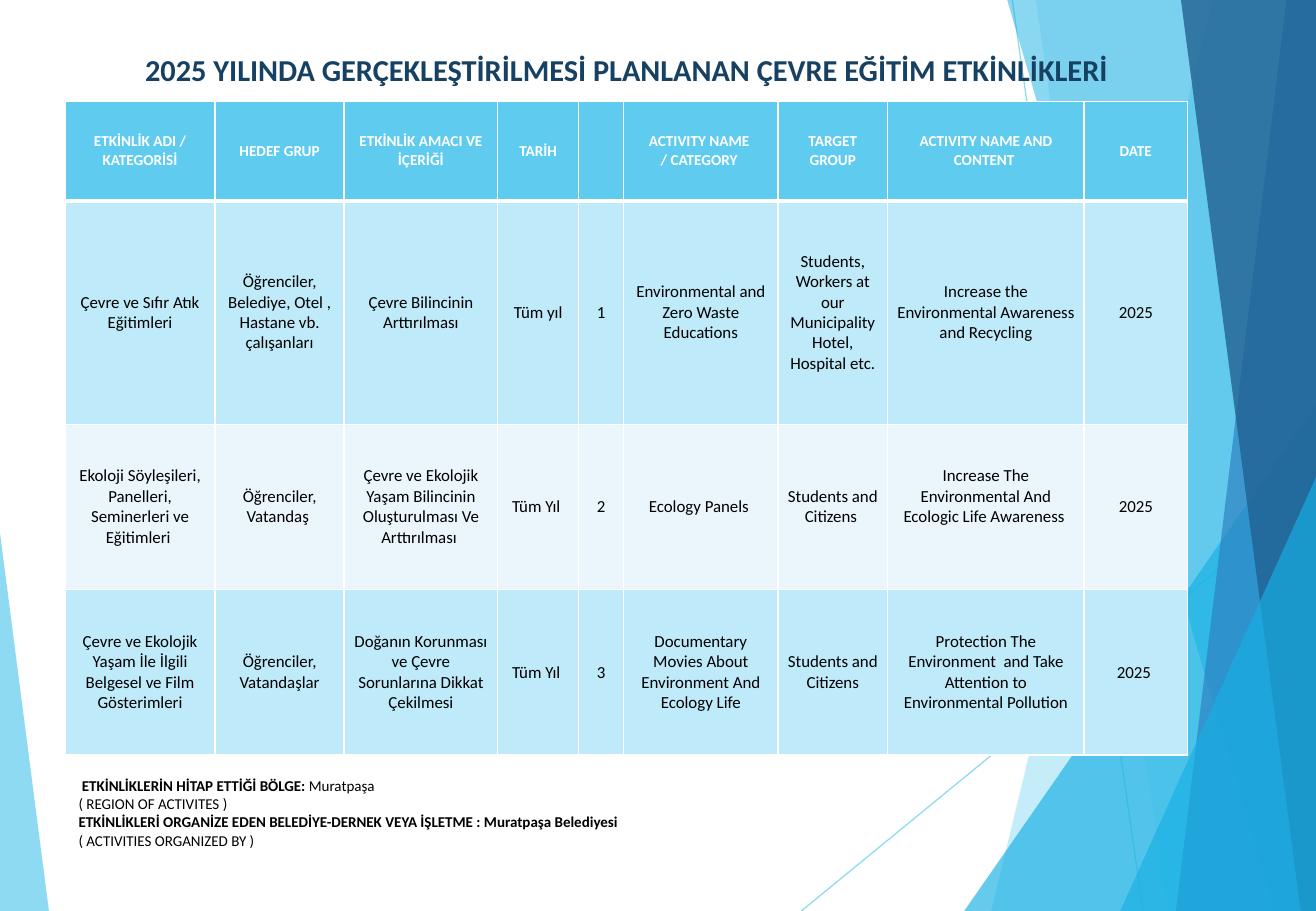
from dataclasses import dataclass

from lxml.etree import SubElement
from pptx import Presentation
from pptx.dml.color import RGBColor
from pptx.enum.shapes import MSO_CONNECTOR, MSO_SHAPE
from pptx.enum.text import MSO_ANCHOR, PP_ALIGN
from pptx.oxml.ns import qn
from pptx.util import Pt

WIDTH, HEIGHT = 780, 540
FONT = "Calibri"
COLORS = {
    "sky": "5FCBEF", "cyan": "17B0E4", "blue": "2E83C3", "navy": "226292",
    "title": "174162", "white": "FFFFFF", "black": "000000",
    "band_dark": "BFEAF9", "band_light": "EAF6FC",
}


@dataclass(frozen=True)
class Ray:
    start: tuple[float, float]
    end: tuple[float, float]


@dataclass(frozen=True)
class Facet:
    """A full-height area from a slanted left edge to the right slide edge."""
    top_x: float
    bottom_x: float
    color: str
    opacity: int


@dataclass(frozen=True)
class Triangle:
    """A right triangle standing on the bottom slide edge."""
    left: float
    top: float
    width: float
    apex: float
    color: str
    opacity: int


RAYS = [Ray((600, 0), (677.5, HEIGHT)), Ray((WIDTH, 290), (475, HEIGHT))]
FACETS = [
    Facet(718.5, 587.5, "sky", 36),
    Facet(614, 692, "sky", 20),
    Triangle(571.5, 240, 208.5, 1, "cyan", 66),
    Facet(597, 755.3, "cyan", 50),
    Facet(762.5, 697, "blue", 70),
    Facet(700, 771, "navy", 80),
    Triangle(664, 283, 116, 1, "cyan", 66),
    Triangle(0, 316, 29, 0, "sky", 70),
]

TITLE = "2025 YILINDA GERÇEKLEŞTİRİLMESİ PLANLANAN ÇEVRE EĞİTİM ETKİNLİKLERİ"
FOOTER = [
    [(" ", False), ("ETKİNLİKLERİN HİTAP ETTİĞİ BÖLGE: ", True), ("Muratpaşa", False)],
    [("( REGION OF ACTIVITES )", False)],
    [("ETKİNLİKLERİ ORGANİZE EDEN BELEDİYE-DERNEK VEYA İŞLETME : Muratpaşa Belediyesi", True)],
    [("( ACTIVITIES ORGANIZED BY )", False)],
]

COLUMN_WIDTHS = [89, 76.5, 91, 48, 26.7, 91.5, 65, 116.5, 61.3]
ROW_HEIGHTS = [59, 132.5, 98, 98]
ROW_FILLS = ["sky", "band_dark", "band_light", "band_dark"]
ROWS = [
    ["ETKİNLİK ADI / KATEGORİSİ", "HEDEF GRUP", "ETKİNLİK AMACI VE İÇERİĞİ", "TARİH", "",
     "ACTIVITY NAME \n/ CATEGORY ", "TARGET GROUP", "ACTIVITY NAME AND CONTENT ", " DATE "],
    ["Çevre ve Sıfır Atık Eğitimleri", "Öğrenciler, Belediye, Otel , Hastane vb. çalışanları",
     "Çevre Bilincinin Arttırılması", "Tüm yıl", "1",
     "Environmental and Zero Waste\n Educations ",
     "Students, Workers at our Municipality Hotel, Hospital etc.",
     "Increase the Environmental Awareness and Recycling", "2025"],
    ["Ekoloji Söyleşileri, Panelleri, Seminerleri ve Eğitimleri ", "Öğrenciler, Vatandaş ",
     "Çevre ve Ekolojik Yaşam Bilincinin Oluşturulması Ve Arttırılması ", "Tüm Yıl ", "2",
     "Ecology Panels ", "Students and Citizens ",
     "Increase The Environmental And Ecologic Life Awareness ", "2025"],
    ["Çevre ve Ekolojik Yaşam İle İlgili Belgesel ve Film Gösterimleri",
     "Öğrenciler, Vatandaşlar", "Doğanın Korunması ve Çevre Sorunlarına Dikkat Çekilmesi",
     "Tüm Yıl ", "3", "Documentary Movies About Environment And Ecology Life",
     "Students and Citizens",
     "Protection The Environment  and Take Attention to Environmental Pollution", "2025 "],
]
RAISED_CELL = (2, 7)


def rgb(name: str) -> RGBColor:
    return RGBColor.from_string(COLORS[name])


def set_opacity(shape, percent: int) -> None:
    for color in shape.element.spPr.iter(qn("a:srgbClr")):
        SubElement(color, qn("a:alpha"), val=str(percent * 1000))


def write_spans(para, spans, *, size: float, color: str = "black",
                align=PP_ALIGN.LEFT) -> None:
    """Fill a paragraph with (text, bold) spans."""
    para.alignment = align
    for text, bold in spans:
        span = para.add_run()
        span.text = text
        span.font.name = FONT
        span.font.size = Pt(size)
        span.font.bold = bold
        span.font.color.rgb = rgb(color)


def write_paragraphs(frame, lines, **text_format) -> None:
    for index, spans in enumerate(lines):
        para = frame.add_paragraph() if index else frame.paragraphs[0]
        write_spans(para, spans, **text_format)


def add_text(page, left: float, top: float, width: float, height: float, lines, *,
             anchor=MSO_ANCHOR.TOP, **text_format) -> None:
    box = page.shapes.add_textbox(Pt(left), Pt(top), Pt(width), Pt(height))
    box.text_frame.word_wrap = True
    box.text_frame.vertical_anchor = anchor
    write_paragraphs(box.text_frame, lines, **text_format)


def add_ray(page, ray: Ray) -> None:
    line = page.shapes.add_connector(
        MSO_CONNECTOR.STRAIGHT, *map(Pt, ray.start + ray.end))
    line.line.color.rgb = rgb("sky")
    line.line.width = Pt(0.75)
    set_opacity(line, 70)
    SubElement(line.element.spPr, qn("a:effectLst"))


def add_facet(page, facet: Facet | Triangle) -> None:
    if isinstance(facet, Triangle):
        shape = page.shapes.add_shape(
            MSO_SHAPE.ISOSCELES_TRIANGLE, Pt(facet.left), Pt(facet.top),
            Pt(facet.width), Pt(HEIGHT - facet.top))
        shape.adjustments[0] = facet.apex
    else:
        outline = page.shapes.build_freeform(Pt(facet.top_x), 0)
        corners = [(WIDTH, 0), (WIDTH, HEIGHT), (facet.bottom_x, HEIGHT)]
        outline.add_line_segments([(Pt(x), Pt(y)) for x, y in corners], close=True)
        shape = outline.convert_to_shape()
    shape.fill.solid()
    shape.fill.fore_color.rgb = rgb(facet.color)
    set_opacity(shape, facet.opacity)
    shape.line.fill.background()
    shape.shadow.inherit = False


def add_borders(cell, widths: dict[str, float]) -> None:
    properties = cell._tc.get_or_add_tcPr()
    for side, width in widths.items():
        border = SubElement(properties, qn(f"a:ln{side}"), w=str(Pt(width)))
        SubElement(SubElement(border, qn("a:solidFill")), qn("a:srgbClr"),
                   val=COLORS["white"])


def add_activity_table(page) -> None:
    frame = page.shapes.add_table(
        len(ROWS), len(COLUMN_WIDTHS), Pt(38.5), Pt(60),
        Pt(sum(COLUMN_WIDTHS)), Pt(sum(ROW_HEIGHTS)))
    table = frame.table
    for column, width in zip(table.columns, COLUMN_WIDTHS):
        column.width = Pt(width)
    for r, (texts, height, fill) in enumerate(zip(ROWS, ROW_HEIGHTS, ROW_FILLS)):
        table.rows[r].height = Pt(height)
        header = r == 0
        for c, text in enumerate(texts):
            cell = table.cell(r, c)
            cell.margin_left = cell.margin_right = Pt(5)
            cell.margin_top = Pt(2.6)
            cell.margin_bottom = Pt(14.8 if (r, c) == RAISED_CELL else 2.6)
            cell.vertical_anchor = MSO_ANCHOR.MIDDLE
            add_borders(cell, {"L": 1, "R": 1, "T": 3 if r == 1 else 1, "B": 3 if header else 1})
            cell.fill.solid()
            cell.fill.fore_color.rgb = rgb(fill)
            if text:
                write_paragraphs(
                    cell.text_frame, [[(line, header)] for line in text.split("\n")],
                    size=9 if header else 10, color="white" if header else "black",
                    align=PP_ALIGN.CENTER)


def main() -> None:
    deck = Presentation()
    deck.slide_width, deck.slide_height = Pt(WIDTH), Pt(HEIGHT)
    page = deck.slides.add_slide(deck.slide_layouts[6])
    for ray in RAYS:
        add_ray(page, ray)
    for facet in FACETS:
        add_facet(page, facet)
    add_text(page, 42, 24, 659, 34.5, [[(TITLE, True)]], size=18, color="title",
             align=PP_ALIGN.CENTER, anchor=MSO_ANCHOR.MIDDLE)
    add_text(page, 39.5, 457, 667.5, 50.5, FOOTER, size=8.9)
    add_activity_table(page)
    deck.save("out.pptx")


if __name__ == "__main__":
    main()
